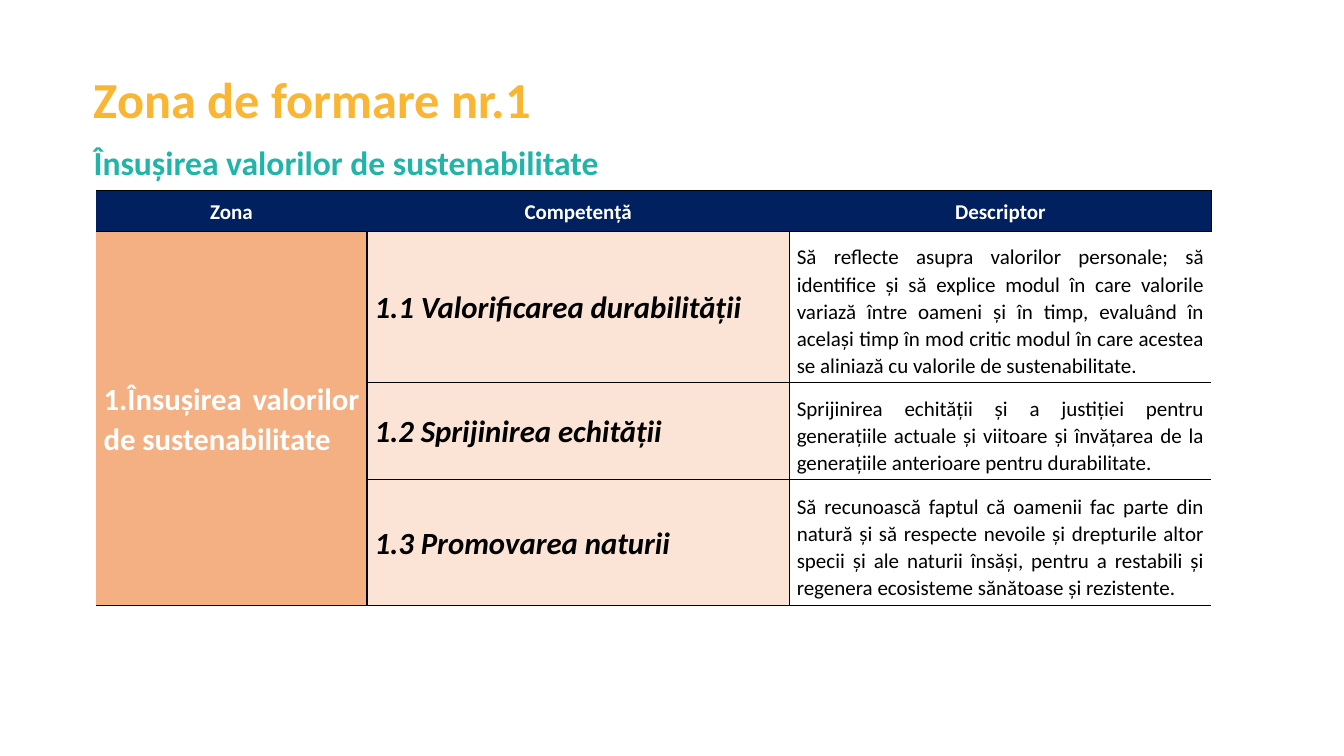
import pptx
import pptx.dml.color
import pptx.enum.text
import pptx.oxml.ns
import pptx.util
from lxml import etree

Cm = pptx.util.Cm
Pt = pptx.util.Pt
RGBColor = pptx.dml.color.RGBColor
ALIGN = pptx.enum.text.PP_ALIGN
ANCHOR = pptx.enum.text.MSO_ANCHOR

AMBER = RGBColor(0xFA, 0xB6, 0x32)
TEAL = RGBColor(0x21, 0xB4, 0xA9)
NAVY = RGBColor(0x00, 0x20, 0x60)
ORANGE = RGBColor(0xF4, 0xB0, 0x83)
PEACH = RGBColor(0xFB, 0xE4, 0xD5)
WHITE = RGBColor(0xFF, 0xFF, 0xFF)
BLACK = RGBColor(0x00, 0x00, 0x00)

HEADINGS = ["Zona", "Competență", "Descriptor"]
ZONE = "1.Însușirea valorilor de sustenabilitate"
COMPETENCES = [
    ("1.1 Valorificarea durabilității",
     "Să reflecte asupra valorilor personale; să identifice și să explice modul "
     "în care valorile variază între oameni și în timp, evaluând în același timp "
     "în mod critic modul în care acestea se aliniază cu valorile de sustenabilitate."),
    ("1.2 Sprijinirea echității",
     "Sprijinirea echității și a justiției pentru generațiile actuale și viitoare "
     "și învățarea de la generațiile anterioare pentru durabilitate."),
    ("1.3 Promovarea naturii",
     "Să recunoască faptul că oamenii fac parte din natură și să respecte nevoile "
     "și drepturile altor specii și ale naturii însăși, pentru a restabili și "
     "regenera ecosisteme sănătoase și rezistente."),
]
COLUMN_WIDTHS = [6.83, 10.64, 10.64]
ROW_HEIGHTS = [1.04, 3.79, 2.46, 3.17]


def write_text(frame, text, *, size, color, bold=False, italic=False,
               align=ALIGN.LEFT, spacing=1.0):
    para = frame.paragraphs[0]
    para.alignment = align
    para.line_spacing = spacing
    span = para.add_run()
    span.text = text
    span.font.name = "Calibri"
    span.font.size = Pt(size)
    span.font.bold = bold
    span.font.italic = italic
    span.font.color.rgb = color


class SlideBuilder:
    def __init__(self, page):
        self.page = page
        self.line_spacing = 1.06

    def heading(self, text, top, width, height, size, color):
        box = self.page.shapes.add_textbox(Cm(2.11), Cm(top), Cm(width), Cm(height))
        box.text_frame.word_wrap = True
        write_text(box.text_frame, text, size=size, color=color, bold=True)

    def table(self, left, top, widths, heights):
        frame = self.page.shapes.add_table(
            len(heights), len(widths), Cm(left), Cm(top),
            Cm(sum(widths)), Cm(sum(heights)))
        grid = frame.table
        grid.first_row = False
        grid.horz_banding = False
        for column, width in zip(grid.columns, widths):
            column.width = Cm(width)
        for row, height in zip(grid.rows, heights):
            row.height = Cm(height)
        return grid

    def borders(self, cell, sides):
        properties = cell._tc.get_or_add_tcPr()
        for side in "LRTB":
            line = etree.SubElement(properties, pptx.oxml.ns.qn("a:ln" + side), w="12700")
            if side in sides:
                solid = etree.SubElement(line, pptx.oxml.ns.qn("a:solidFill"))
                etree.SubElement(solid, pptx.oxml.ns.qn("a:srgbClr"), val=str(BLACK))
            else:
                etree.SubElement(line, pptx.oxml.ns.qn("a:noFill"))

    def cell(self, cell, text, sides, fill=None, top_inset=0, align=ALIGN.JUSTIFY, **style):
        self.borders(cell, sides)
        if fill is None:
            cell.fill.background()
        else:
            cell.fill.solid()
            cell.fill.fore_color.rgb = fill
        cell.vertical_anchor = ANCHOR.MIDDLE
        cell.margin_left = cell.margin_right = Cm(0.19)
        cell.margin_top = Cm(top_inset)
        cell.margin_bottom = 0
        if text:
            write_text(cell.text_frame, text, align=align,
                       spacing=self.line_spacing, **style)


def main():
    deck = pptx.Presentation()
    deck.slide_width, deck.slide_height = Cm(33.87), Cm(19.05)
    builder = SlideBuilder(deck.slides.add_slide(deck.slide_layouts[6]))

    # Headings
    builder.heading("Zona de formare nr.1", 1.6, 22.81, 1.8, 36, AMBER)
    builder.heading("Însușirea valorilor de sustenabilitate", 3.45, 21.36, 1.27, 24, TEAL)

    # Table header
    grid = builder.table(2.42, 4.8, COLUMN_WIDTHS, ROW_HEIGHTS)
    for column, (text, sides) in enumerate(zip(HEADINGS, ["TB", "TB", "TRB"])):
        builder.cell(grid.cell(0, column), text, sides, NAVY,
                     align=ALIGN.CENTER, size=15, color=WHITE, bold=True)

    # Competences with their descriptors
    for row, (competence, descriptor) in enumerate(COMPETENCES, start=1):
        builder.cell(grid.cell(row, 0), ZONE if row == 1 else "", "TRB", ORANGE,
                     size=22, color=WHITE, bold=True)
        builder.cell(grid.cell(row, 1), competence, "LRTB", PEACH,
                     size=22, color=BLACK, bold=True, italic=True)
        builder.cell(grid.cell(row, 2), descriptor, "LTB", top_inset=0.23,
                     size=15, color=BLACK)

    # One zone cell beside all competences
    grid.cell(1, 0).merge(grid.cell(len(COMPETENCES), 0))

    deck.save("out.pptx")


if __name__ == "__main__":
    main()
